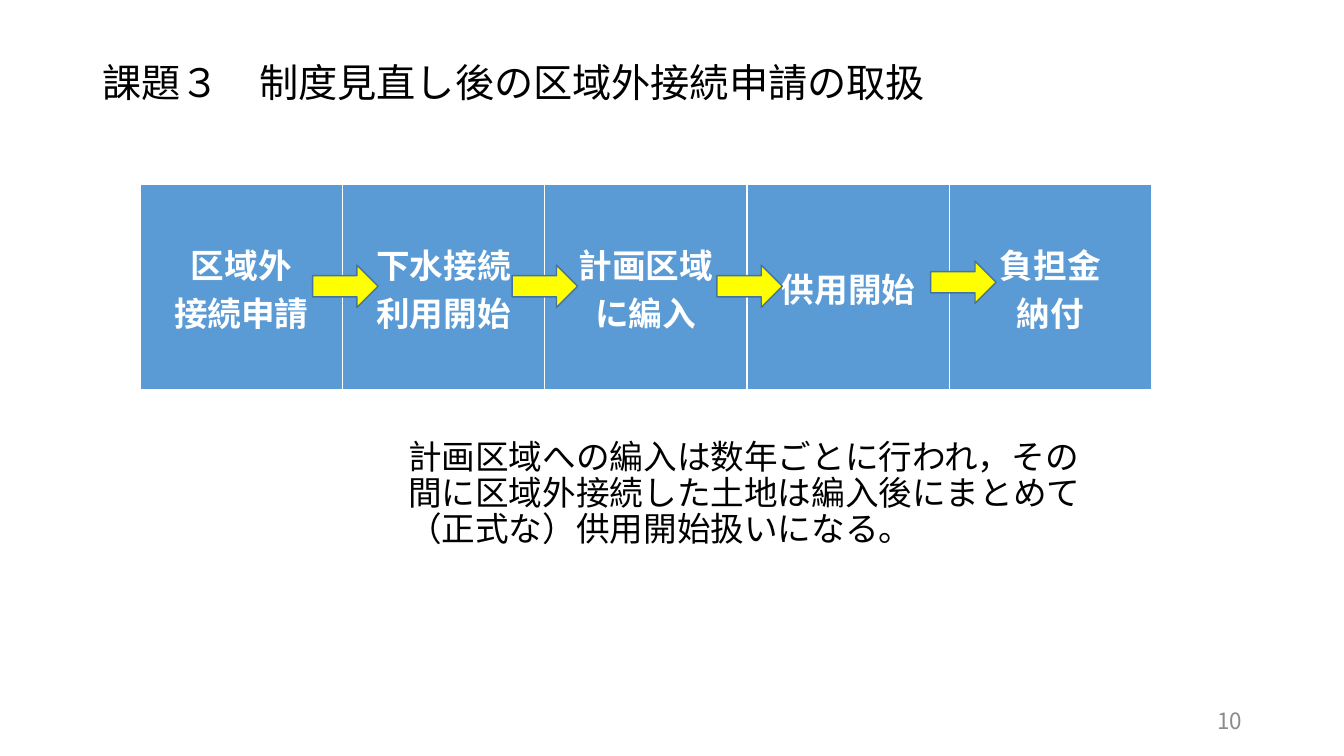
from typing import NamedTuple

from lxml import etree
from pptx import Presentation
from pptx.dml.color import RGBColor
from pptx.enum.shapes import MSO_SHAPE
from pptx.enum.text import MSO_ANCHOR, PP_ALIGN
from pptx.oxml.ns import qn
from pptx.util import Emu, Pt

PX = 9144  # 100 px to the inch
RIGHT_ARROW = MSO_SHAPE.RIGHT_ARROW
LEFT, CENTER, RIGHT = PP_ALIGN.LEFT, PP_ALIGN.CENTER, PP_ALIGN.RIGHT
TOP, MIDDLE = MSO_ANCHOR.TOP, MSO_ANCHOR.MIDDLE
CJK = "Noto Sans CJK JP"
BLACK, WHITE, GRAY = "000000", "FFFFFF", "8C8C8C"
BLUE, NAVY, YELLOW = "5B9BD5", "43739E", "FFFF00"


class Box(NamedTuple):
    x: int
    y: int
    w: int
    h: int


STEPS = [
    "区域外\n接続申請",
    "下水接続\n利用開始",
    "計画区域\nに編入",
    "供用開始",
    "負担金\n納付",
]
FLOW = Box(139, 183, 1003, 205)
ARROWS = [Box(x, y, 65, 42) for x, y in ((310, 263), (508, 263), (711, 263), (923, 259))]
BORDERS = {"a:lnL": 1, "a:lnR": 1, "a:lnT": 1, "a:lnB": 3}


def emu(box: Box) -> list[Emu]:
    return [Emu(v * PX) for v in box]


def rgb(color: str) -> RGBColor:
    return RGBColor.from_string(color)


def write(tf, text: str, *, size: int, color: str = BLACK, font: str = CJK,
          bold: bool = False, align=LEFT, spacing: float = 1.0, before: int = 0) -> None:
    """Fill a text frame, one paragraph per line of text."""
    for i, line in enumerate(text.split("\n")):
        p = tf.add_paragraph() if i else tf.paragraphs[0]
        p.alignment, p.line_spacing, p.space_before = align, spacing, Pt(before)
        r = p.add_run()
        r.text = line
        r.font.size, r.font.bold, r.font.name = Pt(size), bold, font
        r.font.color.rgb = rgb(color)
        etree.SubElement(r.font._element, qn("a:ea"), typeface=CJK)


def add_text(s, box: Box, text: str, *, anchor=TOP, **fmt) -> None:
    tf = s.shapes.add_textbox(*emu(box)).text_frame
    tf.word_wrap = True
    tf.vertical_anchor = anchor
    write(tf, text, **fmt)


def set_borders(cell, color: str) -> None:
    """Outline a cell; border elements come before its fill."""
    tc_pr = cell._tc.get_or_add_tcPr()
    for i, (tag, width) in enumerate(BORDERS.items()):
        ln = etree.Element(qn(tag), w=str(Pt(width)))
        fill = etree.SubElement(ln, qn("a:solidFill"))
        etree.SubElement(fill, qn("a:srgbClr"), val=color)
        tc_pr.insert(i, ln)


def add_flow(s, box: Box, steps: list[str]) -> None:
    table = s.shapes.add_table(1, len(steps), *emu(box)).table
    for cell, step in zip(table.iter_cells(), steps):
        cell.fill.solid()
        cell.fill.fore_color.rgb = rgb(BLUE)
        cell.vertical_anchor = MIDDLE
        set_borders(cell, WHITE)
        write(cell.text_frame, step, size=24, color=WHITE, font="Arial",
              bold=True, align=CENTER)


def add_arrow(s, box: Box) -> None:
    sp = s.shapes.add_shape(RIGHT_ARROW, *emu(box))
    sp.shadow.inherit = False
    sp.fill.solid()
    sp.fill.fore_color.rgb = rgb(YELLOW)
    sp.line.color.rgb = rgb(NAVY)
    sp.line.width = Pt(1)


def main() -> None:
    prs = Presentation()
    prs.slide_width, prs.slide_height = Emu(1333 * PX), Emu(750 * PX)
    s = prs.slides.add_slide(prs.slide_layouts[6])

    # Heading
    add_text(s, Box(92, 58, 1150, 88), "課題３　制度見直し後の区域外接続申請の取扱",
             size=28, spacing=0.9, before=10)

    # Process steps and the arrows between them
    add_flow(s, FLOW, STEPS)
    for arrow in ARROWS:
        add_arrow(s, arrow)

    # Explanation and page number
    add_text(s, Box(395, 432, 697, 164),
             "計画区域への編入は数年ごとに行われ，その間に区域外接続した土地は"
             "編入後にまとめて（正式な）供用開始扱いになる。",
             size=24, spacing=0.9, before=10)
    add_text(s, Box(942, 695, 300, 40), "10", size=16, color=GRAY,
             align=RIGHT, anchor=MIDDLE)

    prs.save("out.pptx")


if __name__ == "__main__":
    main()
